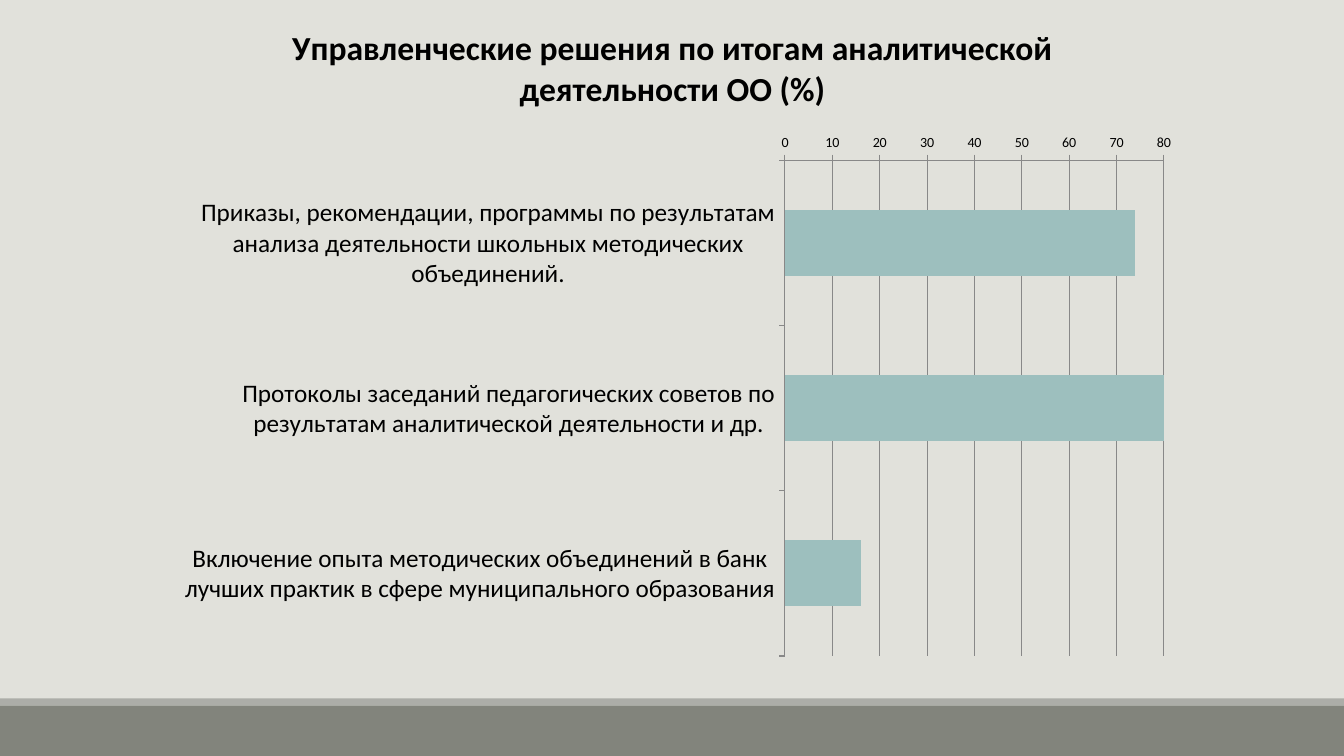
from dataclasses import dataclass

from lxml import etree
from pptx import Presentation
from pptx.chart.data import CategoryChartData
from pptx.dml.color import RGBColor
from pptx.enum.chart import XL_CHART_TYPE, XL_TICK_MARK
from pptx.enum.shapes import MSO_SHAPE
from pptx.oxml.ns import qn
from pptx.util import Cm, Pt

BAR = XL_CHART_TYPE.BAR_STACKED
RECT = MSO_SHAPE.RECTANGLE
OUT = XL_TICK_MARK.OUTSIDE
NONE = XL_TICK_MARK.NONE


@dataclass(frozen=True)
class Theme:
    """Colours, font and type sizes of the slide."""
    back: RGBColor = RGBColor(0xE1, 0xE1, 0xDB)
    floor: RGBColor = RGBColor(0x82, 0x84, 0x7C)
    strip: RGBColor = RGBColor(0xAC, 0xAD, 0xA8)
    bar: RGBColor = RGBColor(0x9D, 0xBF, 0xBE)
    line: RGBColor = RGBColor(0x88, 0x88, 0x88)
    ink: RGBColor = RGBColor(0, 0, 0)
    face: str = "Calibri"
    title: int = 24
    label: int = 18
    tick: int = 10


THEME = Theme()
WIDE, HIGH = 33.87, 19.05
TITLE = "Управленческие решения по итогам аналитической деятельности ОО (%)"
DATA = {
    "Приказы, рекомендации, программы по результатам анализа "
    "деятельности школьных методических объединений.": 74,
    "Протоколы заседаний педагогических советов по результатам "
    "аналитической деятельности и др.": 81,
    "Включение опыта методических объединений в банк лучших практик "
    "в сфере муниципального образования": 16,
}
PLOT = {"x": 0.61, "y": 0.24, "w": 0.37, "h": 0.74}


def set_font(font, size, bold=False):
    """Apply the theme face and ink at a given size."""
    font.name = THEME.face
    font.size = Pt(size)
    font.bold = bold
    font.color.rgb = THEME.ink


def set_line(line, width=0.75):
    """Give a chart line the theme grey."""
    line.color.rgb = THEME.line
    line.width = Pt(width)


def add_base(slide, left, top, width, height):
    """Draw the floor band with its thin strip on top."""
    thin = 0.18
    parts = ((top, thin, THEME.strip), (top + thin, height - thin, THEME.floor))
    for y, tall, fill in parts:
        band = slide.shapes.add_shape(RECT, Cm(left), Cm(y), Cm(width), Cm(tall))
        band.shadow.inherit = False
        band.fill.solid()
        band.fill.fore_color.rgb = fill
        band.line.fill.background()


def place_plot(chart):
    """Fix the inner plot box as shares of the chart."""
    area = chart._chartSpace.chart.plotArea
    for old in area.findall(qn("c:layout")):
        area.remove(old)
    layout = etree.Element(qn("c:layout"))
    manual = etree.SubElement(layout, qn("c:manualLayout"))
    rules = {"layoutTarget": "inner", "xMode": "edge", "yMode": "edge", **PLOT}
    for name, val in rules.items():
        etree.SubElement(manual, qn(f"c:{name}")).set("val", str(val))
    area.insert(0, layout)


def add_bars(slide, left, top, width, height):
    """Place the titled bar chart in its box."""
    data = CategoryChartData(number_format="0")
    data.categories = list(DATA)
    data.add_series("Series 1", list(DATA.values()))
    box = (Cm(left), Cm(top), Cm(width), Cm(height))
    chart = slide.shapes.add_chart(BAR, *box, data).chart
    set_font(chart.font, THEME.tick)
    chart.has_legend = False
    chart.has_title = True
    chart.chart_title.include_in_layout = False
    head = chart.chart_title.text_frame
    head.text = TITLE
    set_font(head.paragraphs[0].font, THEME.title, True)

    plot = chart.plots[0]
    plot.gap_width = 150
    plot.overlap = 100
    plot.vary_by_categories = False
    fill = plot.series[0].format.fill
    fill.solid()
    fill.fore_color.rgb = THEME.bar

    cats, vals = chart.category_axis, chart.value_axis
    for axis, size in ((cats, THEME.label), (vals, THEME.tick)):
        set_font(axis.tick_labels.font, size)
        set_line(axis.format.line)
        axis.major_tick_mark = OUT
        axis.minor_tick_mark = NONE
    cats.reverse_order = True
    cats.has_major_gridlines = False
    vals.minimum_scale, vals.maximum_scale, vals.major_unit = 0, 80, 10
    vals.has_major_gridlines = True
    set_line(vals.major_gridlines.format.line)
    vals.tick_labels.number_format = "0"
    vals.tick_labels.number_format_is_linked = False
    place_plot(chart)


def main():
    """Build and save the slide."""
    deck = Presentation()
    deck.slide_width, deck.slide_height = Cm(WIDE), Cm(HIGH)
    slide = deck.slides.add_slide(deck.slide_layouts[6])
    fill = slide.background.fill
    fill.solid()
    fill.fore_color.rgb = THEME.back
    base = 1.45
    add_base(slide, 0, HIGH - base, WIDE, base)
    add_bars(slide, 4.04, 0, 25.81, 16.87)
    deck.save("out.pptx")


if __name__ == "__main__":
    main()
